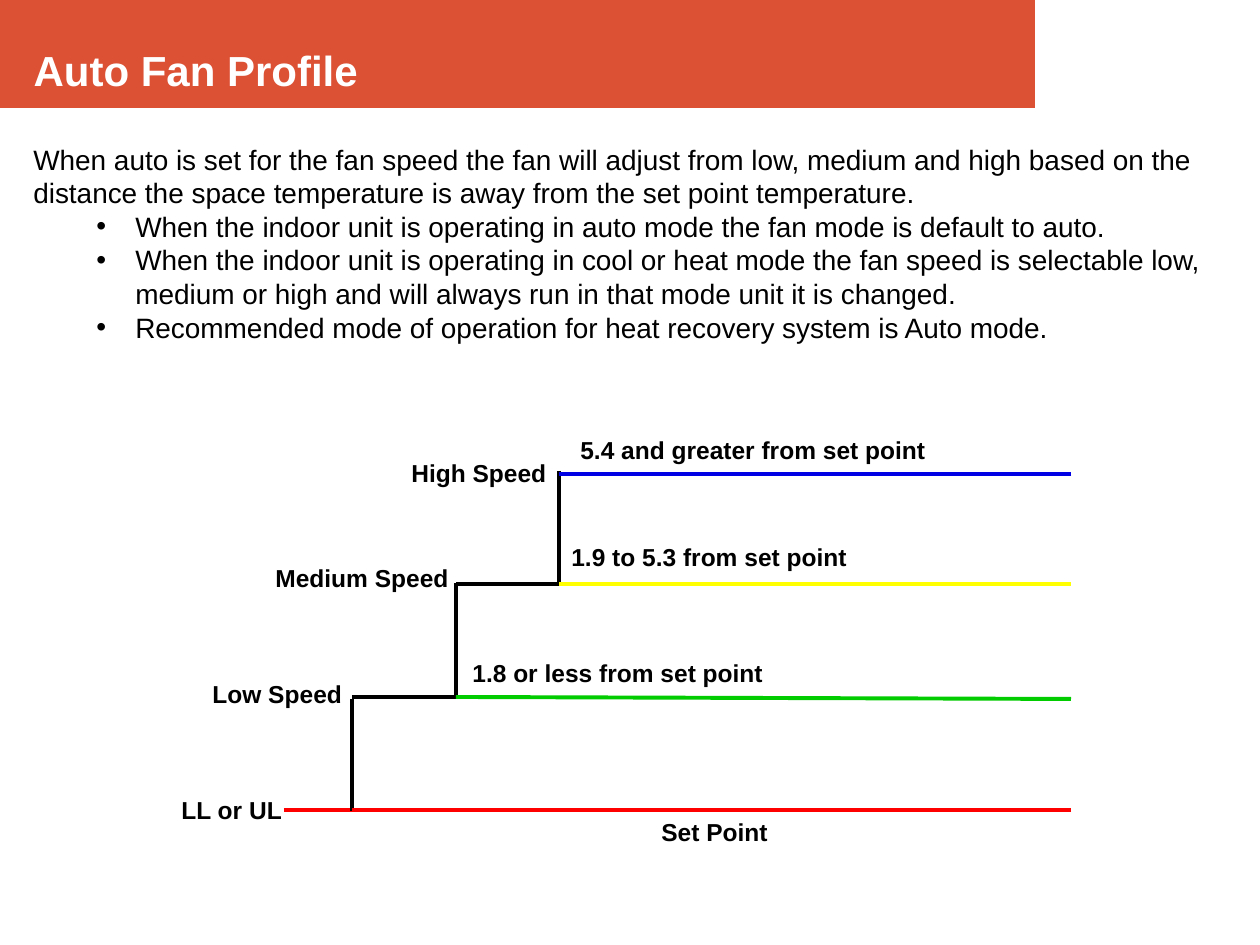
import pptx
import pptx.util
import pptx.dml.color
import pptx.enum.shapes
import pptx.enum.text
from lxml import etree

EMU_PER_PX = 914400 / 126
DRAWING = "{http://schemas.openxmlformats.org/drawingml/2006/main}"


def px(*lengths):
    return [pptx.util.Emu(round(length * EMU_PER_PX)) for length in lengths]


def color(hex_string):
    return pptx.dml.color.RGBColor.from_string(hex_string)


deck = pptx.Presentation()
deck.slide_width, deck.slide_height = px(1260, 945)
slide = deck.slides.add_slide(deck.slide_layouts[5])
shapes = slide.shapes

band = shapes.add_shape(pptx.enum.shapes.MSO_SHAPE.RECTANGLE, *px(0, 0, 1035, 108))
band.shadow.inherit = False
band.fill.solid()
band.fill.fore_color.rgb = color("DC5034")
band.line.fill.background()

title = shapes.title
title.left, title.top, title.width, title.height = px(21, 38, 987, 63)
title.text_frame.text = "Auto Fan Profile"
title.text_frame.vertical_anchor = pptx.enum.text.MSO_ANCHOR.TOP
heading = title.text_frame.paragraphs[0]
heading.alignment = pptx.enum.text.PP_ALIGN.LEFT
heading.font.name = "Arial"
heading.font.size = pptx.util.Pt(24)
heading.font.bold = True
heading.font.color.rgb = color("FFFFFF")
band._element.addnext(title._element)

levels = [
    (284, 810, 352, 810, "FF0000"),
    (352, 699, 352, 811, "000000"),
    (456, 697, 352, 697, "000000"),
    (456, 583, 456, 697, "000000"),
    (559, 584, 456, 584, "000000"),
    (559, 471, 559, 583, "000000"),
    (663, 474, 559, 474, "000000"),
    (1071, 810, 352, 810, "FF0000"),
    (1071, 699, 456, 697, "00CC00"),
    (1071, 474, 559, 474, "0000E4"),
    (1071, 584, 559, 584, "FFFF00"),
]
for *ends, line_color in levels:
    step = shapes.add_connector(pptx.enum.shapes.MSO_CONNECTOR.STRAIGHT, *px(*ends))
    step.line.color.rgb = color(line_color)
    step.line.width = pptx.util.Pt(2.25)
    etree.SubElement(step._element.spPr, DRAWING + "effectLst")

labels = [
    ("LL or UL", 169, 789, 168),
    ("Low Speed", 200, 673, 168),
    ("Medium Speed", 263, 557, 224),
    ("High Speed", 399, 452, 168),
    ("1.8 or less from set point", 460, 652, 357),
    ("1.9 to 5.3 from set point", 559, 536, 455),
    ("5.4 and greater from set point", 568, 429, 391),
    ("Set Point", 649, 811, 168),
]
for wording, left, top, width in labels:
    label = shapes.add_textbox(*px(left, top, width, 43)).text_frame
    label.word_wrap = True
    label.text = wording
    font = label.paragraphs[0].font
    font.name = "Arial"
    font.size = pptx.util.Pt(14)
    font.bold = True
    font.color.rgb = color("000000")

explanation = shapes.add_textbox(*px(21, 136, 1207, 217)).text_frame
explanation.word_wrap = True
explanation.text = "\n".join([
    "When auto is set for the fan speed the fan will adjust from low, medium and high based on the distance the space temperature is away from the set point temperature.",
    "When the indoor unit is operating in auto mode the fan mode is default to auto.",
    "When the indoor unit is operating in cool or heat mode the fan speed is selectable low, medium or high and will always run in that mode unit it is changed.",
    "Recommended mode of operation for heat recovery system is Auto mode.",
])
margin, indent = px(102, -39)
for number, paragraph in enumerate(explanation.paragraphs):
    if number:
        paragraph.level = 1
        properties = paragraph._p.get_or_add_pPr()
        properties.set("marL", str(margin))
        properties.set("indent", str(indent))
        etree.SubElement(properties, DRAWING + "buFont", typeface="Arial")
        etree.SubElement(properties, DRAWING + "buChar", char="•")
    paragraph.font.name = "Arial"
    paragraph.font.size = pptx.util.Pt(16)
    paragraph.font.color.rgb = color("000000")

deck.save("out.pptx")
